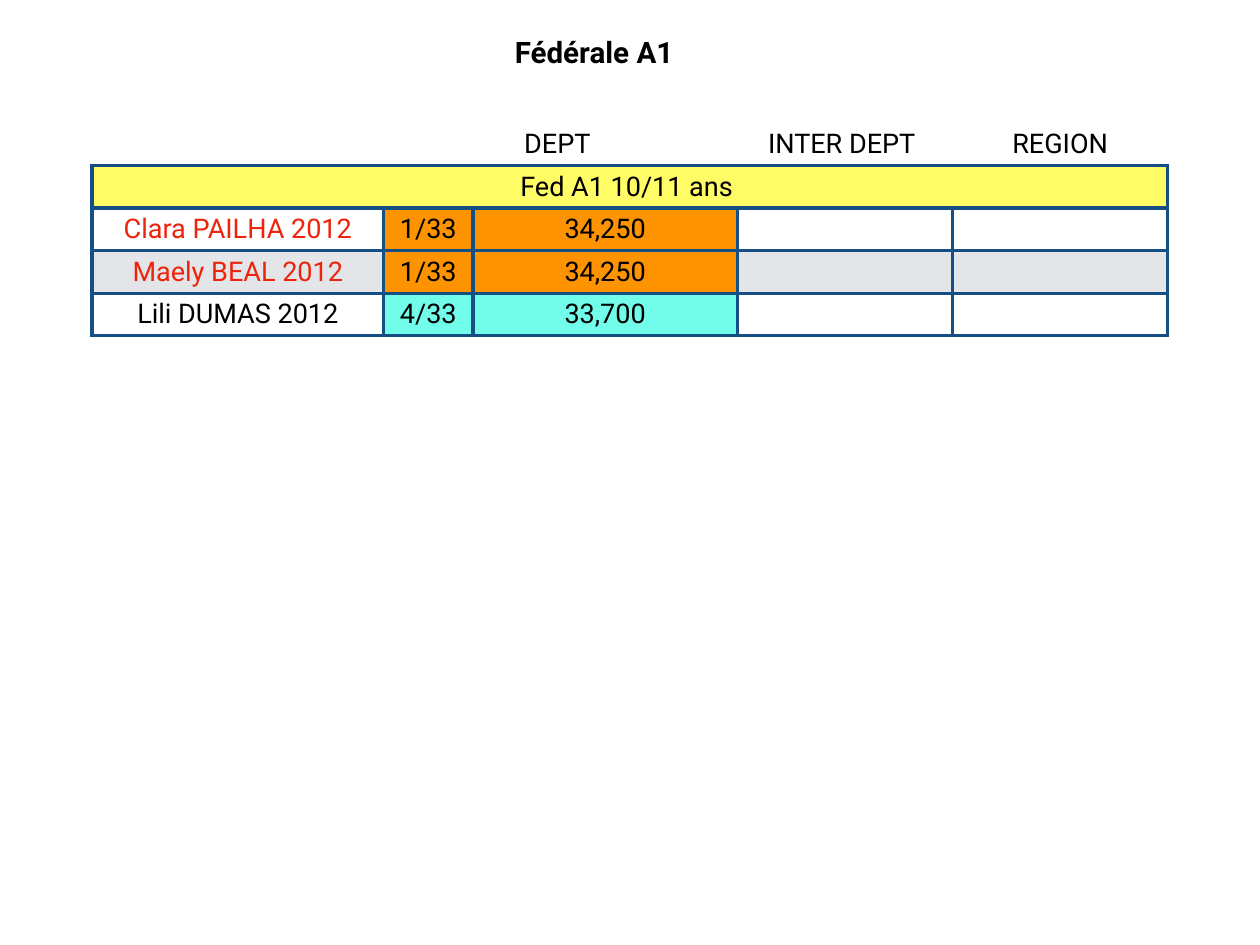
from dataclasses import dataclass

from lxml import etree
from pptx import Presentation
from pptx.dml.color import RGBColor
from pptx.enum.text import MSO_ANCHOR, MSO_AUTO_SIZE, PP_ALIGN
from pptx.oxml.ns import qn
from pptx.util import Inches, Pt

CENTER = PP_ALIGN.CENTER
MIDDLE = MSO_ANCHOR.MIDDLE
GROW = MSO_AUTO_SIZE.SHAPE_TO_FIT_TEXT
PLAIN_TABLE_STYLE = "{2D5ABB26-0587-4C30-8999-92F81FD0307C}"
ALL_SIDES = ("L", "R", "T", "B")


@dataclass(frozen=True)
class Theme:
    font: str = "Roboto"
    title_size: int = 24
    table_size: int = 22
    border_width: int = 3
    inset: float = 0.06
    text: str = "000000"
    highlight: str = "EE230C"
    border: str = "164F86"
    white: str = "FFFFFF"
    band: str = "E3E5E8"
    category: str = "FFFC66"
    first: str = "FE9301"
    fourth: str = "72FDEA"


THEME = Theme()

# Percentages of the slide's width and height
COLUMN_WIDTHS = (23.14, 7.1, 20.96, 17.09, 17.09)
ROW_HEIGHT = 4.5
TABLE_LEFT, TABLE_TOP = 7.31, 13.03
TITLE_AREA = (40.08, 3.09, 14.14, 4.69)

HEADERS = ("", "DEPT ", "", "INTER DEPT ", "REGION")
CATEGORY = "Fed A1 10/11 ans "
# Name, rank, score, name colour, row fill, result fill
GYMNASTS = (
    ("Clara PAILHA 2012", "1/33", "34,250", THEME.highlight, THEME.white, THEME.first),
    ("Maely BEAL 2012", "1/33", "34,250", THEME.highlight, THEME.band, THEME.first),
    ("Lili DUMAS 2012", "4/33", "33,700", THEME.text, THEME.white, THEME.fourth),
)


class SlideBuilder:
    def __init__(self, deck, theme):
        self.deck = deck
        self.theme = theme
        self.slide = deck.slides.add_slide(deck.slide_layouts[6])

    def across(self, percent):
        return round(self.deck.slide_width * percent / 100)

    def down(self, percent):
        return round(self.deck.slide_height * percent / 100)

    def add_text(self, frame, text, size, color=None, bold=False):
        para = frame.paragraphs[0]
        para.alignment = CENTER
        span = para.add_run()
        span.text = text
        span.font.name = self.theme.font
        span.font.size = Pt(size)
        span.font.bold = bold
        span.font.color.rgb = RGBColor.from_string(color or self.theme.text)

    def inset(self, holder):
        """Give a cell or text frame the same margin on every side."""
        margin = Inches(self.theme.inset)
        holder.margin_left = holder.margin_right = margin
        holder.margin_top = holder.margin_bottom = margin
        holder.vertical_anchor = MIDDLE

    def title(self, text, area):
        left, top, width, height = area
        box = self.slide.shapes.add_textbox(
            self.across(left), self.down(top), self.across(width), self.down(height))
        frame = box.text_frame
        frame.word_wrap = False
        frame.auto_size = GROW
        self.inset(frame)
        self.add_text(frame, text, self.theme.title_size, bold=True)

    def table(self, left, top, widths, row_height, row_count):
        shape = self.slide.shapes.add_table(
            row_count, len(widths), self.across(left), self.down(top),
            self.across(sum(widths)), self.down(row_height * row_count))
        table = shape.table
        table.first_row = table.horz_banding = False
        table._tbl.tblPr.find(qn("a:tableStyleId")).text = PLAIN_TABLE_STYLE
        for column, width in zip(table.columns, widths):
            column.width = self.across(width)
        for row in table.rows:
            row.height = self.down(row_height)
        return table

    def borders(self, cell, sides):
        properties = cell._tc.get_or_add_tcPr()
        for side in ALL_SIDES:
            line = etree.SubElement(properties, qn(f"a:ln{side}"))
            if side in sides:
                line.set("w", str(Pt(self.theme.border_width)))
                fill = etree.SubElement(line, qn("a:solidFill"))
                etree.SubElement(fill, qn("a:srgbClr"), val=self.theme.border)
            else:
                etree.SubElement(line, qn("a:noFill"))

    def cell(self, cell, text, fill, color=None, sides=ALL_SIDES):
        self.inset(cell)
        self.borders(cell, sides)
        cell.fill.solid()
        cell.fill.fore_color.rgb = RGBColor.from_string(fill)
        if text:
            self.add_text(cell.text_frame, text, self.theme.table_size, color)


def add_results(builder):
    theme = builder.theme
    last = len(COLUMN_WIDTHS) - 1
    table = builder.table(
        TABLE_LEFT, TABLE_TOP, COLUMN_WIDTHS, ROW_HEIGHT, len(GYMNASTS) + 2)
    for column, header in enumerate(HEADERS):
        builder.cell(table.cell(0, column), header, theme.white, sides=("B",))
        builder.cell(table.cell(1, column), "" if column else CATEGORY, theme.category)
    table.cell(0, 1).merge(table.cell(0, 2))
    table.cell(1, 0).merge(table.cell(1, last))

    for row, gymnast in enumerate(GYMNASTS, start=2):
        name, rank, score, name_color, row_fill, result_fill = gymnast
        builder.cell(table.cell(row, 0), name, row_fill, name_color)
        for column, result in enumerate((rank, score), start=1):
            builder.cell(table.cell(row, column), result, result_fill)
        for column in range(3, last + 1):
            builder.cell(table.cell(row, column), "", row_fill)


def main():
    deck = Presentation()
    deck.slide_width, deck.slide_height = Inches(14.22), Inches(10.67)
    builder = SlideBuilder(deck, THEME)
    add_results(builder)
    builder.title("Fédérale A1", TITLE_AREA)
    deck.save("out.pptx")


if __name__ == "__main__":
    main()
